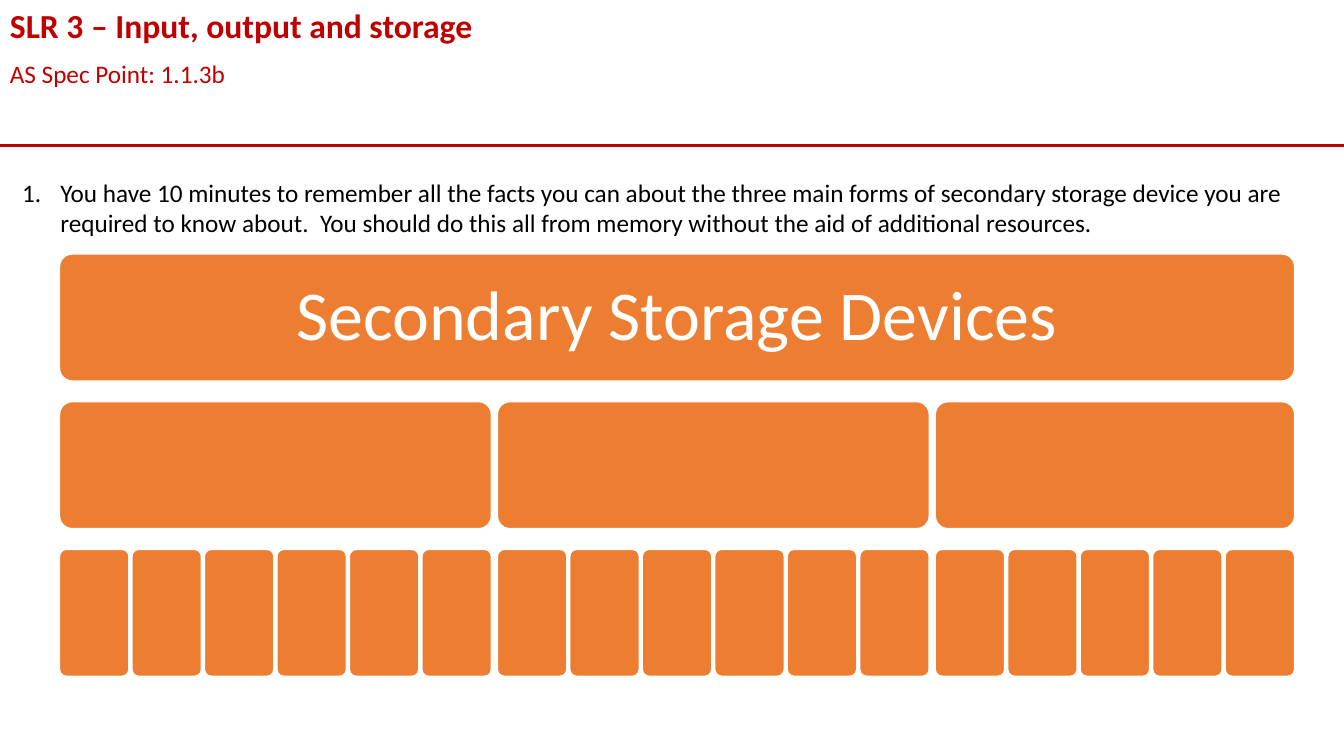
import pptx
import pptx.dml.color
import pptx.enum.shapes
import pptx.enum.text
import pptx.oxml.ns
import pptx.util
from lxml import etree

Inches = pptx.util.Inches
Pt = pptx.util.Pt

COLORS = {"red": "C00000", "black": "000000", "orange": "ED7D31", "white": "FFFFFF"}
SLIDE_WIDTH, SLIDE_HEIGHT = 13.33, 7.5
LEAF_COUNTS = (6, 6, 5)
LEAF_GAP, BRANCH_GAP = 0.03, 0.06
ROW_HEIGHT = 1.26


def rgb(name):
    return pptx.dml.color.RGBColor.from_string(COLORS[name])


def style_font(font, color, **formats):
    font.color.rgb = rgb(color)
    for attribute, value in {"name": "Calibri", **formats}.items():
        setattr(font, attribute, value)


def add_text(slide, box, text, color, number_indent=0, **formats):
    """Add a wrapping text box, numbered when number_indent is given."""
    frame = slide.shapes.add_textbox(*map(Inches, box)).text_frame
    frame.word_wrap = True
    frame.auto_size = pptx.enum.text.MSO_AUTO_SIZE.SHAPE_TO_FIT_TEXT
    paragraph = frame.paragraphs[0]
    if number_indent:
        properties = paragraph._p.get_or_add_pPr()
        properties.set("marL", str(Inches(number_indent)))
        properties.set("indent", str(-Inches(number_indent)))
        numbering = etree.SubElement(properties, pptx.oxml.ns.qn("a:buAutoNum"))
        numbering.set("type", "arabicPeriod")
    run = paragraph.add_run()
    run.text = text
    style_font(run.font, color, **formats)


def add_header(slide, left, top, width, height):
    add_text(slide, (left, top + 0.53, width, 0.4), "AS Spec Point: 1.1.3b", "red", size=Pt(18))
    add_text(slide, (left, top, width, 0.5), "SLR 3 – Input, output and storage", "red",
             size=Pt(24), bold=True)
    bottom = Inches(top + height)
    rule = slide.shapes.add_connector(pptx.enum.shapes.MSO_CONNECTOR.STRAIGHT,
                                      Inches(left), bottom, Inches(left + width), bottom)
    rule.line.color.rgb = rgb("red")
    rule.line.width = Pt(2.25)
    etree.SubElement(rule._element.spPr, pptx.oxml.ns.qn("a:effectLst"))


def add_tile(slide, left, top, width):
    tile = slide.shapes.add_shape(pptx.enum.shapes.MSO_SHAPE.ROUNDED_RECTANGLE,
                                  *map(Inches, (left, top, width, ROW_HEIGHT)))
    tile.adjustments[0] = 0.1
    tile.shadow.inherit = False
    tile.fill.solid()
    tile.fill.fore_color.rgb = rgb("orange")
    tile.line.color.rgb = rgb("white")
    tile.line.width = Pt(1)
    return tile


def add_hierarchy(slide, left, top, width, height):
    """Stack a root tile, a row of branches and the leaves under each branch."""
    root = add_tile(slide, left, top, width)
    frame = root.text_frame
    frame.word_wrap = True
    frame.vertical_anchor = pptx.enum.text.MSO_ANCHOR.MIDDLE
    paragraph = frame.paragraphs[0]
    paragraph.alignment = pptx.enum.text.PP_ALIGN.CENTER
    paragraph.line_spacing = 0.9
    run = paragraph.add_run()
    run.text = "Secondary Storage Devices"
    style_font(run.font, "white", size=Pt(50))

    row_step = (height - ROW_HEIGHT) / 2
    branches = len(LEAF_COUNTS)
    gaps = BRANCH_GAP * (branches - 1) + LEAF_GAP * (sum(LEAF_COUNTS) - branches)
    leaf_width = (width - gaps) / sum(LEAF_COUNTS)
    leaf_step = leaf_width + LEAF_GAP
    for leaf_count in LEAF_COUNTS:
        branch_width = leaf_count * leaf_step - LEAF_GAP
        add_tile(slide, left, top + row_step, branch_width)
        for leaf in range(leaf_count):
            add_tile(slide, left + leaf * leaf_step, top + 2 * row_step, leaf_width)
        left += branch_width + BRANCH_GAP


def main():
    deck = pptx.Presentation()
    deck.slide_width, deck.slide_height = Inches(SLIDE_WIDTH), Inches(SLIDE_HEIGHT)
    slide = deck.slides.add_slide(deck.slide_layouts[6])
    add_header(slide, 0, 0, SLIDE_WIDTH, 1.44)
    add_text(slide, (0.12, 1.71, 13.05, 0.71),
             "You have 10 minutes to remember all the facts you can about the three main forms of "
             "secondary storage device you are required to know about.  You should do this all "
             "from memory without the aid of additional resources.",
             "black", number_indent=0.38, size=Pt(18))
    add_hierarchy(slide, 0.59, 2.52, 12.25, 4.19)
    deck.save("out.pptx")


if __name__ == "__main__":
    main()
